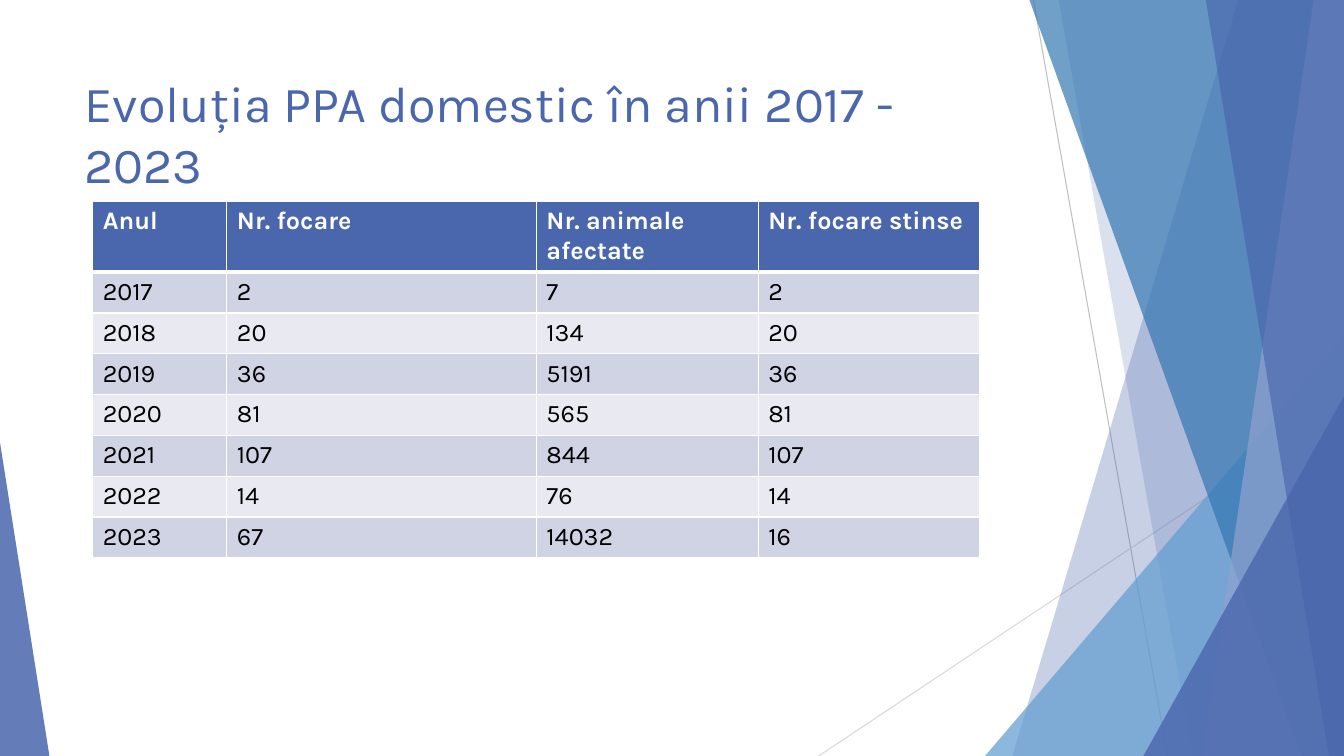
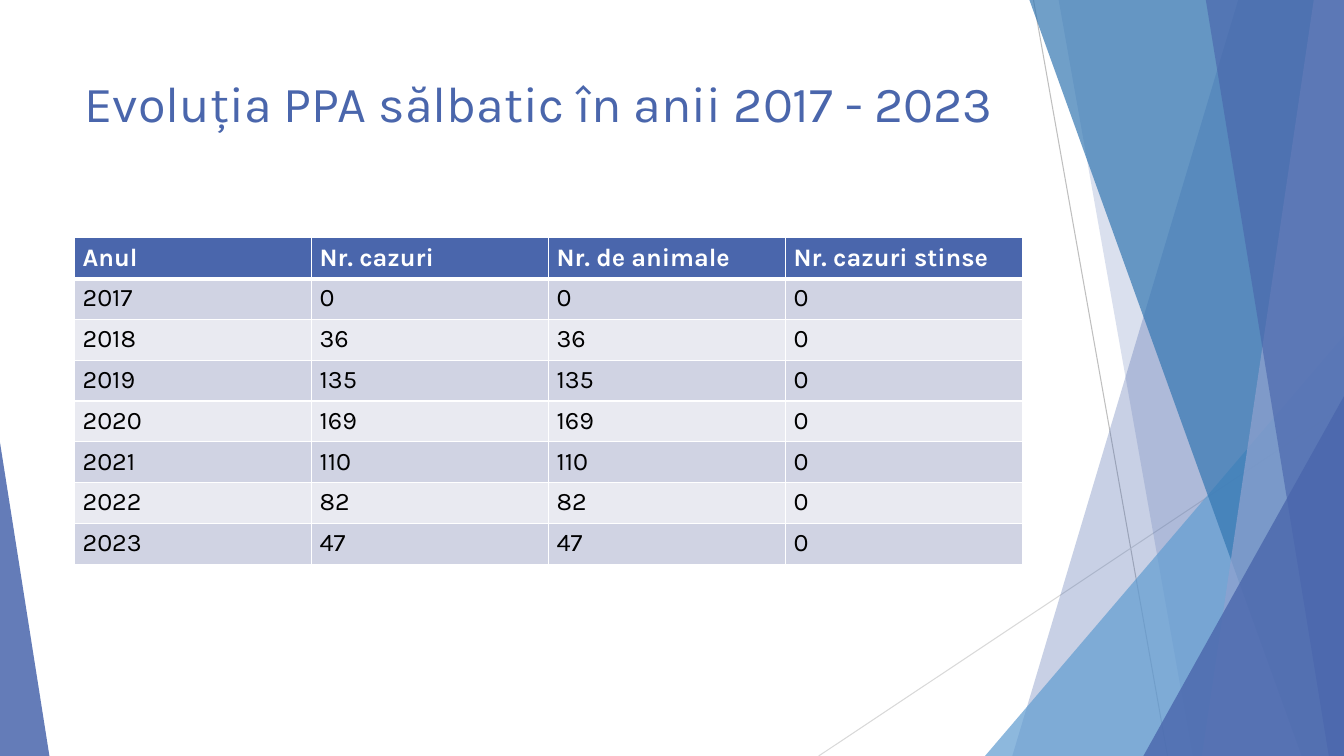
"""Build two slides on the evolution of PPA cases, 2017 - 2023."""
from lxml import etree
from pptx import Presentation
from pptx import util as u
from pptx.dml.color import RGBColor
from pptx.enum import shapes
from pptx.oxml.ns import qn

WIDTH, HEIGHT = 13.33, 7.5
COLORS = {
    "blue": "4A66AC", "pale_blue": "90A2CF", "sky": "629DD1", "ocean": "3477B2",
    "gray": "BFBFBF", "light_gray": "D9D9D9", "white": "FFFFFF", "black": "000000",
    "odd_row": "D0D3E3", "even_row": "E9EAF1",
}


class Deck:
    """Hold the shared style and the current slide."""

    font = "Karla"

    def __init__(self):
        self.presentation = Presentation()
        self.presentation.slide_width = u.Inches(WIDTH)
        self.presentation.slide_height = u.Inches(HEIGHT)
        self.slide = None

    def color(self, name):
        return RGBColor.from_string(COLORS[name])

    def new_slide(self, heading):
        self.slide = self.presentation.slides.add_slide(self.presentation.slide_layouts[6])
        self.backdrop()
        self.title(heading)

    def backdrop(self):
        self.thin_line((10.25, 0), (11.58, HEIGHT), "gray")
        self.thin_line((WIDTH, 4.03), (8.12, HEIGHT), "light_gray")
        self.band(12.28, 10.04, "blue", 30)
        self.band(10.5, 11.83, "blue", 20)
        self.triangle(9.77, 3.33, 3.56, 1, "sky", 72)
        self.band(10.21, 12.91, "ocean", 70)
        self.band(13.03, 11.92, "pale_blue", 70)
        self.band(11.96, 13.18, "blue", 65)
        self.triangle(11.34, 3.93, 1.99, 1, "blue", 80)
        self.triangle(0, 4.39, 0.49, 0, "blue", 85)

    def thin_line(self, start, end, color):
        line = self.slide.shapes.add_connector(
            shapes.MSO_CONNECTOR.STRAIGHT, *(u.Inches(v) for v in (*start, *end)))
        line.line.color.rgb = self.color(color)
        line.line.width = u.Pt(0.75)
        etree.SubElement(line.element.spPr, qn("a:effectLst"))

    def band(self, top_x, bottom_x, color, opacity):
        corners = [(WIDTH, 0), (WIDTH, HEIGHT), (bottom_x, HEIGHT)]
        outline = self.slide.shapes.build_freeform(u.Inches(top_x), 0)
        outline.add_line_segments([(u.Inches(x), u.Inches(y)) for x, y in corners])
        self.paint(outline.convert_to_shape(), color, opacity)

    def triangle(self, left, top, width, apex, color, opacity):
        box = (u.Inches(v) for v in (left, top, width, HEIGHT - top))
        facet = self.slide.shapes.add_shape(shapes.MSO_SHAPE.ISOSCELES_TRIANGLE, *box)
        facet.adjustments[0] = apex
        self.paint(facet, color, opacity)

    def paint(self, facet, color, opacity):
        facet.shadow.inherit = False
        facet.line.fill.background()
        facet.fill.solid()
        facet.fill.fore_color.rgb = self.color(color)
        tint = facet.element.spPr.find(".//" + qn("a:srgbClr"))
        etree.SubElement(tint, qn("a:alpha"), val=str(opacity * 1000))

    def set_text(self, frame, text, size, color, bold=False):
        frame.text = text
        font = frame.paragraphs[0].runs[0].font
        font.name, font.size, font.bold = self.font, u.Pt(size), bold
        font.color.rgb = self.color(color)

    def title(self, heading):
        box = self.slide.shapes.add_textbox(*(u.Inches(v) for v in (0.74, 0.67, 9.4, 1.44)))
        box.text_frame.word_wrap = True
        self.set_text(box.text_frame, heading, 36, "blue")

    def table(self, left, top, widths, rows, side_margin):
        box = (u.Inches(v) for v in (left, top, sum(widths), 3.24))
        grid = self.slide.shapes.add_table(len(rows), len(widths), *box).table
        for column, width in zip(grid.columns, widths):
            column.width = u.Inches(width)
        for r, row in enumerate(rows):
            for c, value in enumerate(row):
                self.cell(grid.cell(r, c), r, value, side_margin)

    def cell(self, cell, row, value, side_margin):
        header = row == 0
        cell.margin_left = cell.margin_right = u.Inches(side_margin)
        self.set_text(cell.text_frame, value, 18, "white" if header else "black", header)
        self.border(cell, "L", 1)
        self.border(cell, "R", 1)
        self.border(cell, "T", 3 if row == 1 else 1)
        self.border(cell, "B", 3 if header else 1)
        cell.fill.solid()
        band = "odd_row" if row % 2 else "even_row"
        cell.fill.fore_color.rgb = self.color("blue" if header else band)

    def border(self, cell, side, points):
        properties = cell._tc.get_or_add_tcPr()
        edge = etree.SubElement(properties, qn("a:ln" + side), w=str(u.Pt(points)))
        fill = etree.SubElement(edge, qn("a:solidFill"))
        etree.SubElement(fill, qn("a:srgbClr"), val=COLORS["white"])


def yearly_rows(header, *series):
    years = (str(year) for year in range(2017, 2024))
    return [header, *zip(years, *(map(str, values) for values in series))]


def main():
    deck = Deck()

    outbreaks = [2, 20, 36, 81, 107, 14, 67]
    affected = [7, 134, 5191, 565, 844, 76, 14032]
    closed = outbreaks[:-1] + [16]
    deck.new_slide("Evoluția PPA domestic în anii 2017 - 2023")
    deck.table(0.92, 2, [1.33, 3.07, 2.2, 2.2], yearly_rows(
        ("Anul", "Nr. focare", "Nr. animale afectate", "Nr. focare stinse"),
        outbreaks, affected, closed), 0.1)

    cases = [0, 36, 135, 169, 110, 82, 47]
    deck.new_slide("Evoluția PPA sălbatic în anii 2017 - 2023")
    deck.table(0.74, 2.36, [2.35] * 4, yearly_rows(
        ("Anul", "Nr. cazuri", "Nr. de animale", "Nr. cazuri stinse"),
        cases, cases, [0] * len(cases)), 0.08)

    deck.presentation.save("out.pptx")


if __name__ == "__main__":
    main()
